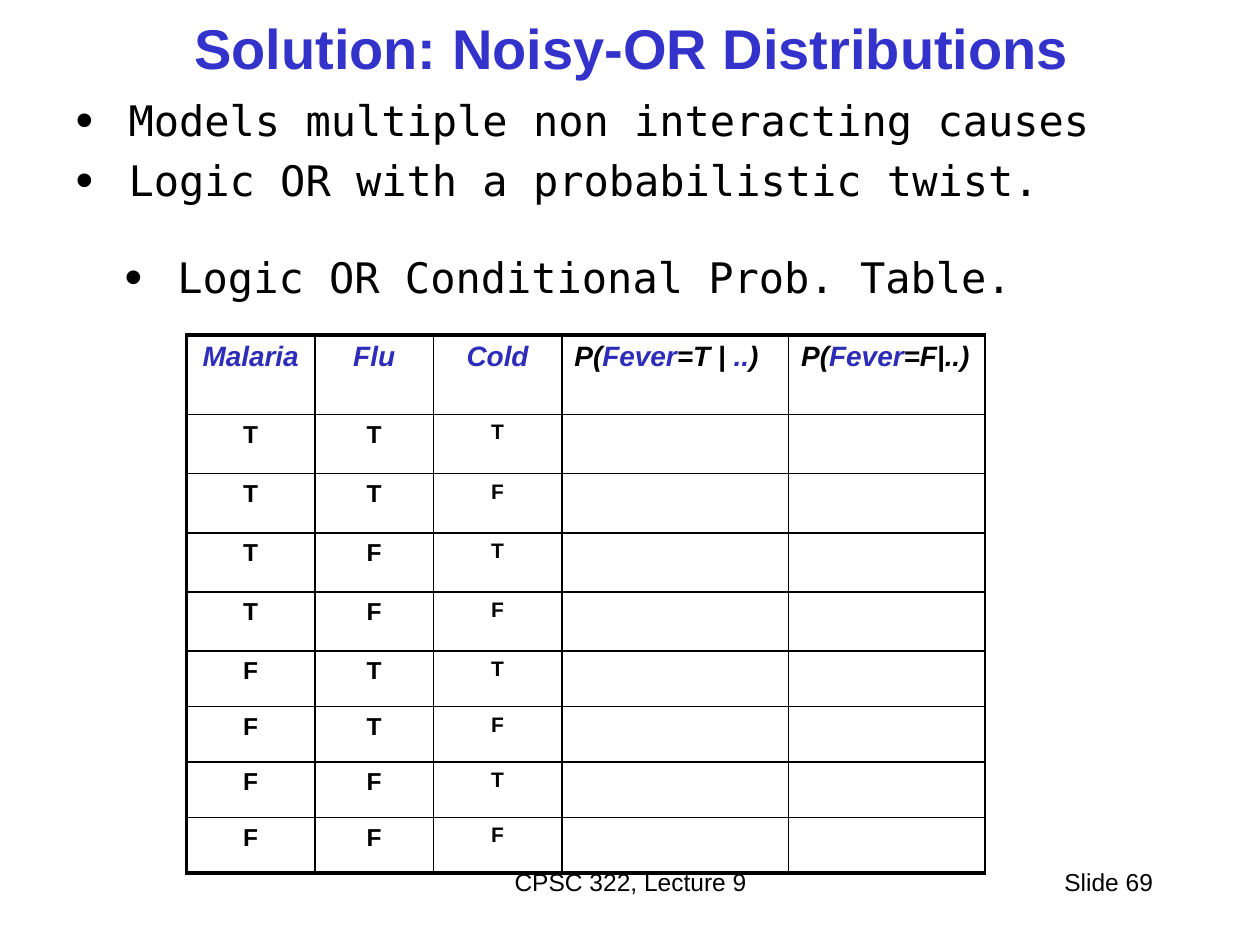
from itertools import product

from lxml import etree
from pptx import Presentation
from pptx import util as u
from pptx.dml import color
from pptx.enum import text
from pptx.oxml import ns

HUES = {"ink": "000000", "title": "3333CC", "name": "2D2DB9", "paper": "FFFFFF"}
SANS, MONO = "Arial", "DejaVu Sans Mono"
LEFT, MID, RIGHT = (text.PP_ALIGN.LEFT, text.PP_ALIGN.CENTER,
                    text.PP_ALIGN.RIGHT)
WIDTHS = [1.02, 0.94, 1.02, 1.8, 1.56]
HEIGHTS = [0.63] + [0.47] * 4 + [0.44] * 4
HEADS = [["Malaria"], ["Flu"], ["Cold"],
         ["P(", "Fever", "=T | ", "..", ")"], ["P(", "Fever", "=F|..)"]]
CAUSES = 3


def hue(key):
    return color.RGBColor.from_string(HUES[key])


def place(shape, box):
    shape.left, shape.top, shape.width, shape.height = map(u.Inches, box)
    shape.text_frame.word_wrap = True
    shape.text_frame.auto_size = text.MSO_AUTO_SIZE.NONE


def style(run, size, key="ink", face=SANS, bold=False, slant=False):
    font = run.font
    font.name, font.size = face, u.Pt(size)
    font.bold, font.italic = bold, slant
    font.color.rgb = hue(key)


def title(shape, words):
    place(shape, (0.35, 0, 9.33, 0.75))
    frame = shape.text_frame
    frame.text = words
    frame.vertical_anchor = text.MSO_ANCHOR.MIDDLE
    para = frame.paragraphs[0]
    para.alignment = MID
    style(para.runs[0], 32, "title", bold=True)


def bullets(shape, box, lines):
    place(shape, box)
    frame = shape.text_frame
    frame.text = "\n".join(lines)
    for para in frame.paragraphs:
        para.level = 1
        para.alignment = LEFT
        para.space_before = u.Pt(5.6)
        style(para.runs[0], 24, face=MONO)
        props = para._p.get_or_add_pPr()
        props.set("marL", str(u.Inches(0.92)))
        props.set("indent", str(u.Inches(-0.42)))
        tint = etree.SubElement(props, ns.qn("a:buClr"))
        etree.SubElement(tint, ns.qn("a:srgbClr"), val=HUES["ink"])
        etree.SubElement(props, ns.qn("a:buSzPct"), val="120000")
        etree.SubElement(props, ns.qn("a:buFont"), typeface=SANS)
        etree.SubElement(props, ns.qn("a:buChar"), char="•")


def footer(slide, box, words, align):
    shape = slide.shapes.add_textbox(0, 0, 0, 0)
    place(shape, box)
    shape.text_frame.text = words
    para = shape.text_frame.paragraphs[0]
    para.alignment = align
    style(para.runs[0], 14)


def border(cell, sides):
    props = cell._tc.get_or_add_tcPr()
    for side, width in sides.items():
        line = etree.SubElement(props, ns.qn("a:ln" + side),
                                w=str(u.Pt(width)))
        fill = etree.SubElement(line, ns.qn("a:solidFill"))
        etree.SubElement(fill, ns.qn("a:srgbClr"), val=HUES["ink"])


def head(cell, parts, align):
    para = cell.text_frame.paragraphs[0]
    para.alignment = align
    # Variable names are blue; the notation around them is black
    keys = ["name"] if len(parts) == 1 else ["ink", "name"]
    for i, part in enumerate(parts):
        run = para.add_run()
        run.text = part
        style(run, 16, keys[i % len(keys)], bold=True, slant=True)


def truth(cell, value, size):
    cell.text_frame.text = value
    para = cell.text_frame.paragraphs[0]
    para.alignment = MID
    style(para.runs[0], size, bold=True)


def grid(slide):
    rows, cols = len(HEIGHTS), len(WIDTHS)
    table = slide.shapes.add_table(
        rows, cols, u.Inches(1.48), u.Inches(2.66),
        u.Inches(sum(WIDTHS)), u.Inches(sum(HEIGHTS))).table
    table.first_row = table.horz_banding = False
    for col, width in zip(table.columns, WIDTHS):
        col.width = u.Inches(width)
    for row, height in zip(table.rows, HEIGHTS):
        row.height = u.Inches(height)

    # Thick outer edge on the left, top and bottom
    for r, c in product(range(rows), range(cols)):
        cell = table.cell(r, c)
        border(cell, {"L": 1 if c else 2.25, "R": 1, "T": 1 if r else 2.25,
                      "B": 2.25 if r == rows - 1 else 1})
        cell.fill.solid()
        cell.fill.fore_color.rgb = hue("paper")

    for c, parts in enumerate(HEADS):
        head(table.cell(0, c), parts, MID if c < CAUSES else LEFT)
    for r, values in enumerate(product("TF", repeat=CAUSES), 1):
        for c, value in enumerate(values):
            truth(table.cell(r, c), value, 12 if c == CAUSES - 1 else 14)


def main():
    deck = Presentation()
    deck.slide_width, deck.slide_height = u.Inches(10), u.Inches(7.5)
    slide = deck.slides.add_slide(deck.slide_layouts[1])

    # Footer
    footer(slide, (3.42, 6.83, 3.17, 0.5), "CPSC 322, Lecture 9", MID)
    footer(slide, (7.17, 6.83, 2.08, 0.5), "Slide 69", RIGHT)

    # Title and main points
    title(slide.shapes.title, "Solution: Noisy-OR Distributions")
    bullets(slide.placeholders[1], (0, 0.7, 9.61, 0.73),
            ["Models multiple non interacting causes",
             "Logic OR with a probabilistic twist."])

    # Conditional probability table and its heading
    grid(slide)
    bullets(slide.shapes.add_textbox(0, 0, 0, 0), (0.39, 1.95, 8.44, 0.73),
            ["Logic OR Conditional Prob. Table."])

    deck.save("out.pptx")


if __name__ == "__main__":
    main()
